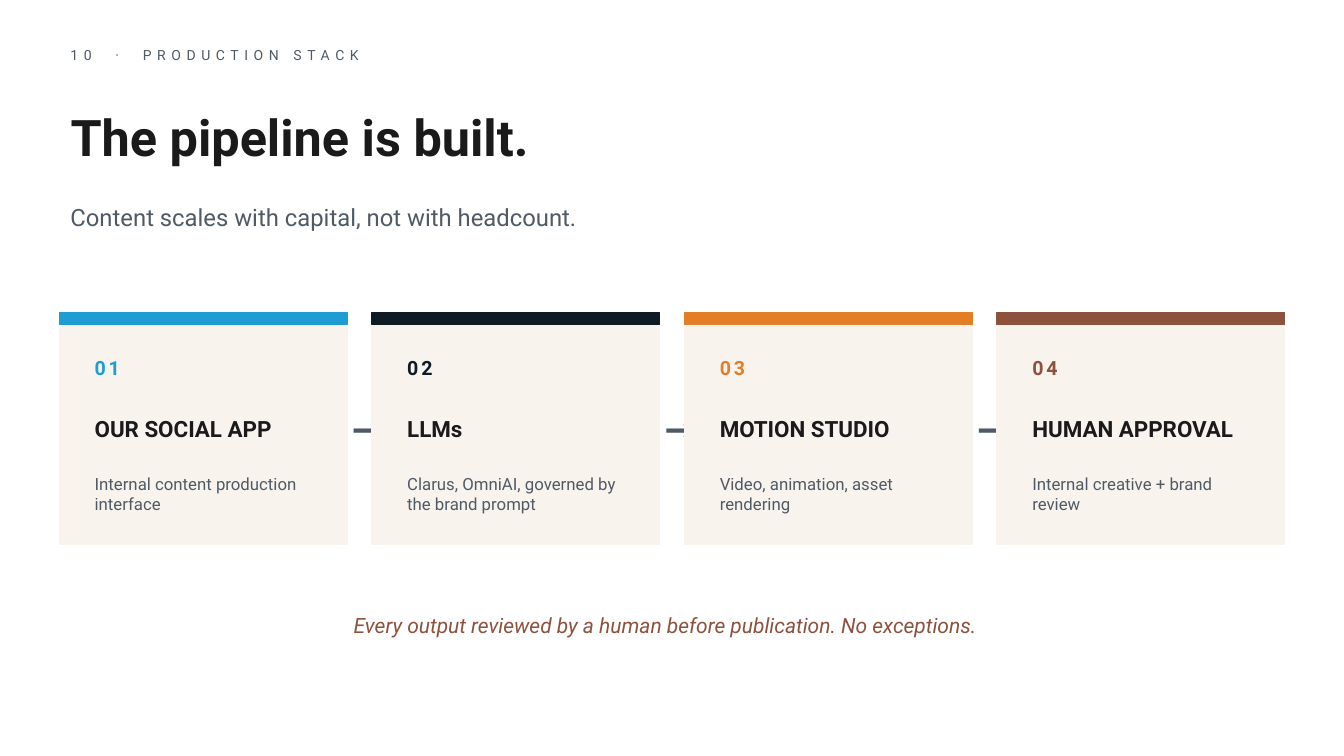
from pptx import Presentation
from pptx.dml.color import RGBColor
from pptx.enum.shapes import MSO_SHAPE as Shape
from pptx.enum.text import MSO_ANCHOR as Anchor, MSO_AUTO_SIZE as AutoSize, PP_ALIGN as Align
from pptx.util import Inches, Pt

FONT = "Roboto"
WHITE = RGBColor(0xFF, 0xFF, 0xFF)
INK = RGBColor(0x1A, 0x1A, 0x1A)
SLATE = RGBColor(0x4F, 0x5A, 0x66)
CREAM = RGBColor(0xF8, 0xF4, 0xED)
BLUE = RGBColor(0x1D, 0x9D, 0xD4)
NAVY = RGBColor(0x0E, 0x1A, 0x24)
ORANGE = RGBColor(0xE4, 0x7E, 0x26)
BROWN = RGBColor(0x8D, 0x52, 0x3E)

# Content
SECTION = ("10", "·", "PRODUCTION STACK")
TITLE = "The pipeline is built."
SUBTITLE = "Content scales with capital, not with headcount."
STEPS = [
    ("OUR SOCIAL APP", "Internal content production interface", BLUE),
    ("LLMs", "Clarus, OmniAI, governed by the brand prompt", NAVY),
    ("MOTION STUDIO", "Video, animation, asset rendering", ORANGE),
    ("HUMAN APPROVAL", "Internal creative + brand review", BROWN),
]
CLOSING = "Every output reviewed by a human before publication. No exceptions."

# Layout, in inches
PAGE_W, PAGE_H = 13.33, 7.5
MARGIN, TEXT_W = 0.6, 12
CARD_LEFT, CARD_TOP, CARD_W, CARD_H = 0.59, 3.1, 2.85, 2.3
CARD_STEP, CARD_PAD, BAR_H = 3.1, 0.25, 0.12
ARROW_SIZE, ARROW_OVERLAP = 0.4, 0.05

deck = Presentation()
deck.slide_width, deck.slide_height = Inches(PAGE_W), Inches(PAGE_H)
page = deck.slides.add_slide(deck.slide_layouts[5])
page.background.fill.solid()
page.background.fill.fore_color.rgb = WHITE


def add_span(para, text, size, color, bold=False, italic=False, spacing=0):
    span = para.add_run()
    span.text = text
    font = span.font
    font.name, font.size, font.bold, font.italic = FONT, Pt(size), bold, italic
    font.color.rgb = color
    if spacing:
        font._element.set("spc", str(round(spacing * 100)))


def prepare(box, left, top, width, height, align=Align.LEFT):
    box.left, box.top = Inches(left), Inches(top)
    box.width, box.height = Inches(width), Inches(height)
    frame = box.text_frame
    frame.word_wrap, frame.auto_size = True, AutoSize.NONE
    frame.vertical_anchor = Anchor.MIDDLE
    para = frame.paragraphs[0]
    para.alignment = align
    return para


def add_box(place, align=Align.LEFT):
    box = page.shapes.add_textbox(0, 0, 0, 0)
    return prepare(box, *place, align)


def add_block(left, top, width, height, color):
    block = page.shapes.add_shape(
        Shape.RECTANGLE, Inches(left), Inches(top), Inches(width), Inches(height))
    block.shadow.inherit = False
    block.fill.solid()
    block.fill.fore_color.rgb = color
    block.line.color.rgb = color
    block.line.width = Pt(1)


# Heading: the spaces around the dot are tracked wider than the letters
section = add_box((MARGIN, 0.4, TEXT_W, 0.3))
for index, part in enumerate(SECTION):
    if index:
        add_span(section, " ", 10, SLATE, spacing=10.5)
    add_span(section, part, 10, SLATE, spacing=4)
title = prepare(page.shapes.title, MARGIN, 0.85, TEXT_W, 1)
add_span(title, TITLE, 36, INK, bold=True)
add_span(add_box((MARGIN, 1.9, TEXT_W, 0.5)), SUBTITLE, 17, SLATE)

# Pipeline cards, each arrow tucked under the next card
for index, (name, detail, accent) in enumerate(STEPS):
    left = CARD_LEFT + index * CARD_STEP
    inner_left, inner_w = left + CARD_PAD, CARD_W - 2 * CARD_PAD
    add_block(left, CARD_TOP, CARD_W, CARD_H, CREAM)
    add_block(left, CARD_TOP, CARD_W, BAR_H, accent)
    add_span(add_box((inner_left, CARD_TOP + 0.3, inner_w, 0.5)),
             f"{index + 1:02}", 14, accent, bold=True, spacing=2)
    add_span(add_box((inner_left, CARD_TOP + 0.85, inner_w, 0.6)), name, 16, INK, bold=True)
    add_span(add_box((inner_left, CARD_TOP + 1.4, inner_w, 0.8)), detail, 12, SLATE)
    if index < len(STEPS) - 1:
        arrow_left = left + CARD_W - ARROW_OVERLAP
        arrow = add_box((arrow_left, CARD_TOP + 0.95, ARROW_SIZE, ARROW_SIZE), Align.CENTER)
        add_span(arrow, "→", 26, SLATE, bold=True)

# Closing line
add_span(add_box((MARGIN, 6, TEXT_W, 0.4), Align.CENTER), CLOSING, 15, BROWN, italic=True)

deck.save("out.pptx")
